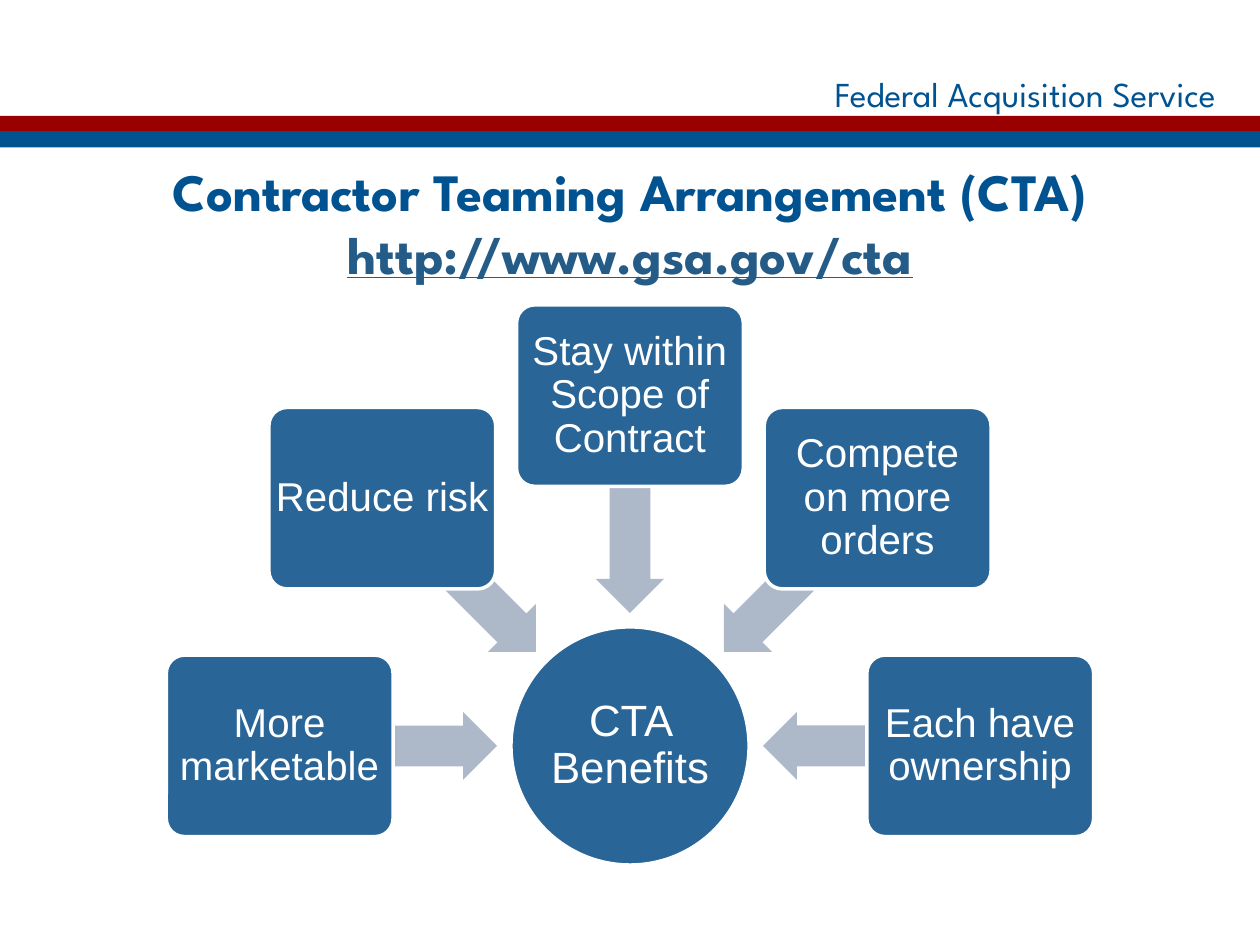
from dataclasses import dataclass
from math import cos, radians, sin

from pptx import Presentation
from pptx import util as u
from pptx.dml.color import RGBColor
from pptx.enum import shapes, text

WHITE = RGBColor(0xFF, 0xFF, 0xFF)
NAVY = RGBColor(0x00, 0x53, 0x90)
RED = RGBColor(0x99, 0x00, 0x00)
STEEL = RGBColor(0x29, 0x65, 0x97)
LINK = RGBColor(0x25, 0x5B, 0x87)
ARROW = RGBColor(0xAD, 0xB8, 0xC9)

HEADING_FONT = "League Spartan"
HUB_X, HUB_Y, HUB_SIZE = 5, 5.92, 1.89
BOX_W, BOX_H, BOX_RADIUS = 1.8, 1.44, 2.78
ARROW_W, ARROW_H, ARROW_RADIUS = 1.73, 0.54, 1.92


@dataclass
class Benefit:
    label: str
    angle: int


BENEFITS = [
    Benefit("More marketable", 180),
    Benefit("Reduce risk", 225),
    Benefit("Stay within Scope of Contract", 270),
    Benefit("Compete on more orders", 315),
    Benefit("Each have ownership", 0),
]


def write(p, content: str, *, size: float, color: RGBColor, font: str = "Arial",
          bold: bool = False, underline: bool = False,
          align=text.PP_ALIGN.CENTER, spacing: float = 1.0) -> None:
    p.alignment = align
    p.line_spacing = spacing
    r = p.add_run()
    r.text = content
    f = r.font
    f.name, f.size, f.bold, f.underline = font, u.Pt(size), bold, underline
    f.color.rgb = color


def set_frame(tf, margin: float, wrap: bool = True) -> None:
    tf.word_wrap = wrap
    tf.auto_size = text.MSO_AUTO_SIZE.NONE
    tf.vertical_anchor = text.MSO_ANCHOR.MIDDLE
    tf.margin_left = tf.margin_right = u.Inches(margin)
    tf.margin_top = tf.margin_bottom = u.Inches(min(margin, 0.05))


def add_shape(s, kind, x: float, y: float, w: float, h: float,
              fill: RGBColor, outlined: bool = False):
    sp = s.shapes.add_shape(kind, u.Inches(x), u.Inches(y), u.Inches(w), u.Inches(h))
    sp.shadow.inherit = False
    sp.fill.solid()
    sp.fill.fore_color.rgb = fill
    if outlined:
        sp.line.color.rgb = WHITE
        sp.line.width = u.Pt(2)
    else:
        sp.line.fill.background()
    return sp


def add_node(s, kind, x: float, y: float, w: float, h: float,
             label: str, size: float):
    sp = add_shape(s, kind, x - w / 2, y - h / 2, w, h, STEEL, outlined=True)
    set_frame(sp.text_frame, 0)
    write(sp.text_frame.paragraphs[0], label, size=size, color=WHITE, spacing=0.9)
    return sp


def around_hub(angle: float, radius: float) -> tuple[float, float]:
    a = radians(angle)
    return HUB_X + radius * cos(a), HUB_Y + radius * sin(a)


def add_benefit(s, benefit: Benefit) -> None:
    x, y = around_hub(benefit.angle, ARROW_RADIUS)
    arrow = add_shape(s, shapes.MSO_SHAPE.LEFT_ARROW, x - ARROW_W / 2,
                      y - ARROW_H / 2, ARROW_W, ARROW_H, ARROW)
    arrow.adjustments[0] = 0.6
    arrow.adjustments[1] = 0.5
    arrow.rotation = benefit.angle
    x, y = around_hub(benefit.angle, BOX_RADIUS)
    box = add_node(s, shapes.MSO_SHAPE.ROUNDED_RECTANGLE, x, y, BOX_W, BOX_H,
                   benefit.label, 23)
    box.adjustments[0] = 0.1


def add_header(s) -> None:
    sp = s.shapes.add_textbox(u.Inches(5.5), u.Inches(0.55), u.Inches(4.25), u.Inches(0.38))
    set_frame(sp.text_frame, 0.1, wrap=False)
    write(sp.text_frame.paragraphs[0], "Federal Acquisition Service", size=20,
          color=NAVY, font=HEADING_FONT, align=text.PP_ALIGN.RIGHT)
    for y, color in ((0.92, RED), (1.04, NAVY)):
        add_shape(s, shapes.MSO_SHAPE.RECTANGLE, 0, y, 10, 0.13, color)


def add_title(s) -> None:
    sp = s.shapes.title
    sp.left, sp.top = u.Inches(0), u.Inches(1.17)
    sp.width, sp.height = u.Inches(10), u.Inches(1.18)
    set_frame(sp.text_frame, 0.1)
    p = sp.text_frame.paragraphs[0]
    write(p, "Contractor Teaming Arrangement (CTA)", size=30, color=NAVY,
          font=HEADING_FONT, bold=True)
    p.add_line_break()
    write(p, "http://www.gsa.gov/cta", size=30, color=LINK,
          font=HEADING_FONT, bold=True, underline=True)


def main() -> None:
    prs = Presentation()
    prs.slide_width, prs.slide_height = u.Inches(10), u.Inches(7.5)
    s = prs.slides.add_slide(prs.slide_layouts[5])
    add_header(s)
    add_node(s, shapes.MSO_SHAPE.OVAL, HUB_X, HUB_Y, HUB_SIZE, HUB_SIZE,
             "CTA Benefits", 25)
    for benefit in BENEFITS:
        add_benefit(s, benefit)
    add_title(s)
    prs.save("out.pptx")


if __name__ == "__main__":
    main()
